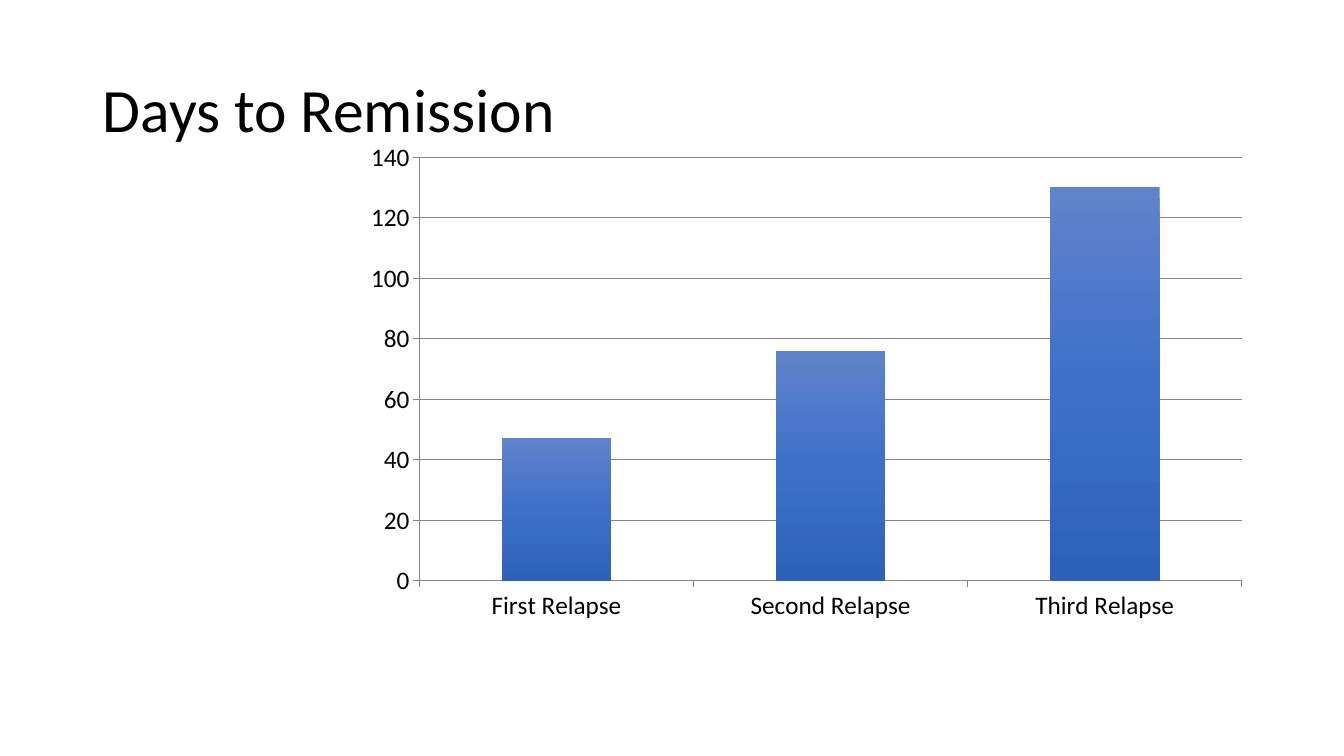
from copy import deepcopy
from dataclasses import dataclass

from pptx import Presentation
from pptx.chart.data import CategoryChartData
from pptx.dml.color import RGBColor
from pptx.enum.chart import XL_CHART_TYPE as ChartType, XL_TICK_MARK as TickMark
from pptx.enum.text import MSO_ANCHOR as Anchor
from pptx.util import Emu, Pt

EMU_PER_PX = 914400 / 100.8


def px(length):
    return Emu(round(length * EMU_PER_PX))


@dataclass(frozen=True)
class Theme:
    font: str = "Calibri"
    ink: str = "000000"
    rule: str = "868686"
    bar_gradient: tuple = ("6083CB", "3E70CA", "2E61BA")
    title_size: int = 44
    chart_size: int = 18


class SlideBuilder:
    """Draws styled elements on the current slide."""

    def __init__(self, page, theme):
        self.page = page
        self.theme = theme

    def style_font(self, font, size):
        font.name = self.theme.font
        font.size = Pt(size)
        font.bold = False
        font.color.rgb = RGBColor.from_string(self.theme.ink)

    def title(self, text, left, top, width, height):
        box = self.page.shapes.add_textbox(px(left), px(top), px(width), px(height))
        frame = box.text_frame
        frame.word_wrap = True
        frame.vertical_anchor = Anchor.MIDDLE
        frame.text = text
        para = frame.paragraphs[0]
        para.line_spacing = 0.9
        for span in para.runs:
            self.style_font(span.font, self.theme.title_size)

    def style_axis(self, axis):
        axis.major_tick_mark = TickMark.OUTSIDE
        axis.minor_tick_mark = TickMark.NONE
        self.style_line(axis.format.line)

    def style_line(self, line):
        line.color.rgb = RGBColor.from_string(self.theme.rule)
        line.width = Pt(0.75)

    def style_bars(self, series):
        fill = series.format.fill
        fill.gradient()
        fill.gradient_angle = 270
        stop_list = series._element.xpath(".//a:gsLst")[0]
        stop_list.insert(1, deepcopy(stop_list[0]))
        colors = self.theme.bar_gradient
        for index, (stop, color) in enumerate(zip(fill.gradient_stops, colors)):
            stop.position = index / (len(colors) - 1)
            stop.color.rgb = RGBColor.from_string(color)
        series.format.line.fill.background()

    def column_chart(self, name, values, axis_max, axis_step, left, top, width, height):
        data = CategoryChartData()
        data.categories = list(values)
        data.add_series(name, list(values.values()))
        chart = self.page.shapes.add_chart(
            ChartType.COLUMN_CLUSTERED, px(left), px(top), px(width), px(height), data
        ).chart
        chart.has_title = False
        chart.has_legend = False
        self.style_font(chart.font, self.theme.chart_size)
        self.style_axis(chart.category_axis)
        value_axis = chart.value_axis
        self.style_axis(value_axis)
        value_axis.minimum_scale = 0
        value_axis.maximum_scale = axis_max
        value_axis.major_unit = axis_step
        value_axis.has_major_gridlines = True
        self.style_line(value_axis.major_gridlines.format.line)
        plot = chart.plots[0]
        plot.gap_width = 150
        plot.vary_by_categories = False
        self.style_bars(plot.series[0])


def main():
    deck = Presentation()
    deck.slide_width = px(1344)
    deck.slide_height = px(756)
    page = deck.slides.add_slide(deck.slide_layouts[6])
    builder = SlideBuilder(page, Theme())
    builder.title("Days to Remission", 93, 40, 1159, 146)
    remission_days = {"First Relapse": 47, "Second Relapse": 76, "Third Relapse": 130}
    builder.column_chart("Series 1", remission_days, 140, 20, 353, 132, 907, 499)
    deck.save("out.pptx")


if __name__ == "__main__":
    main()
